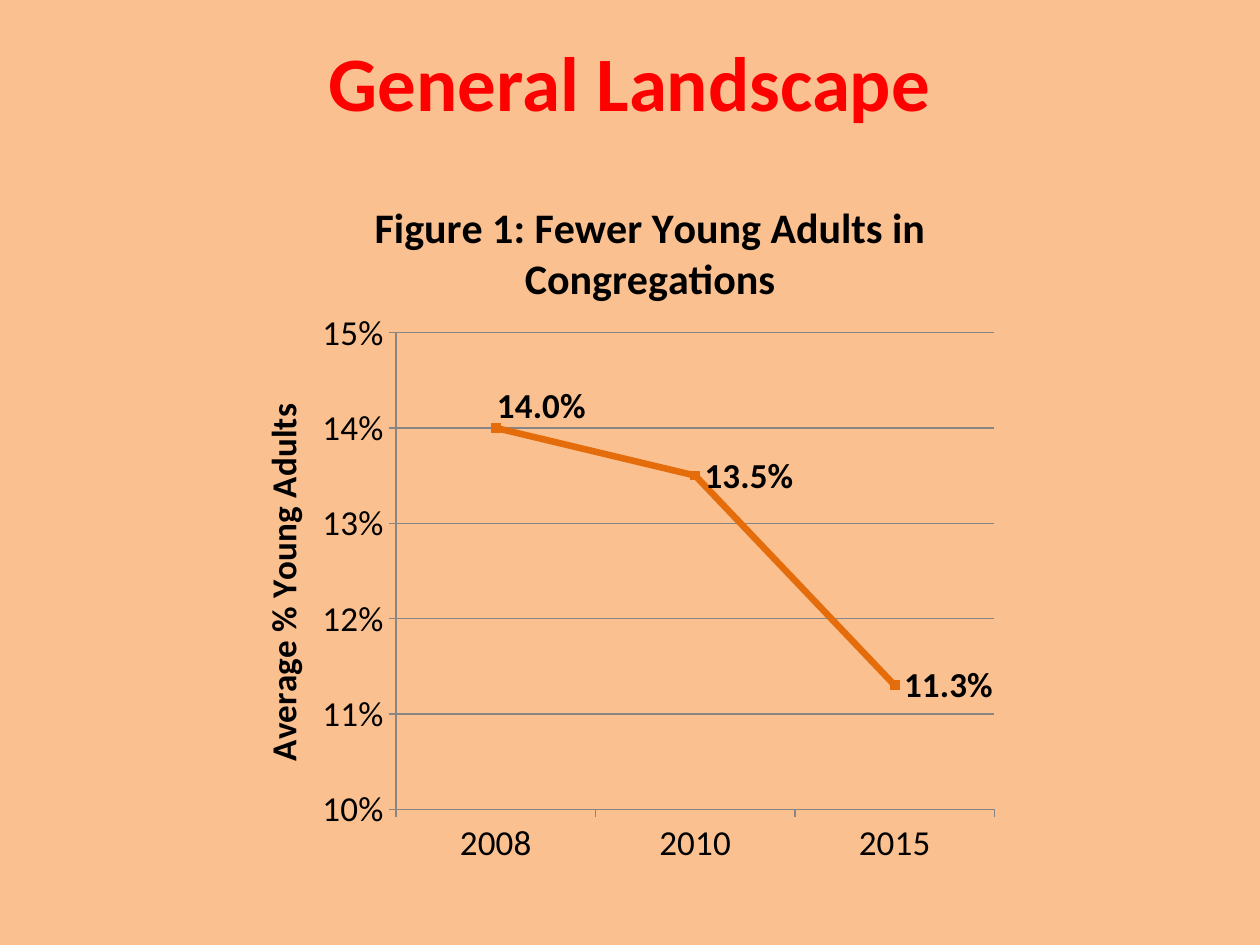
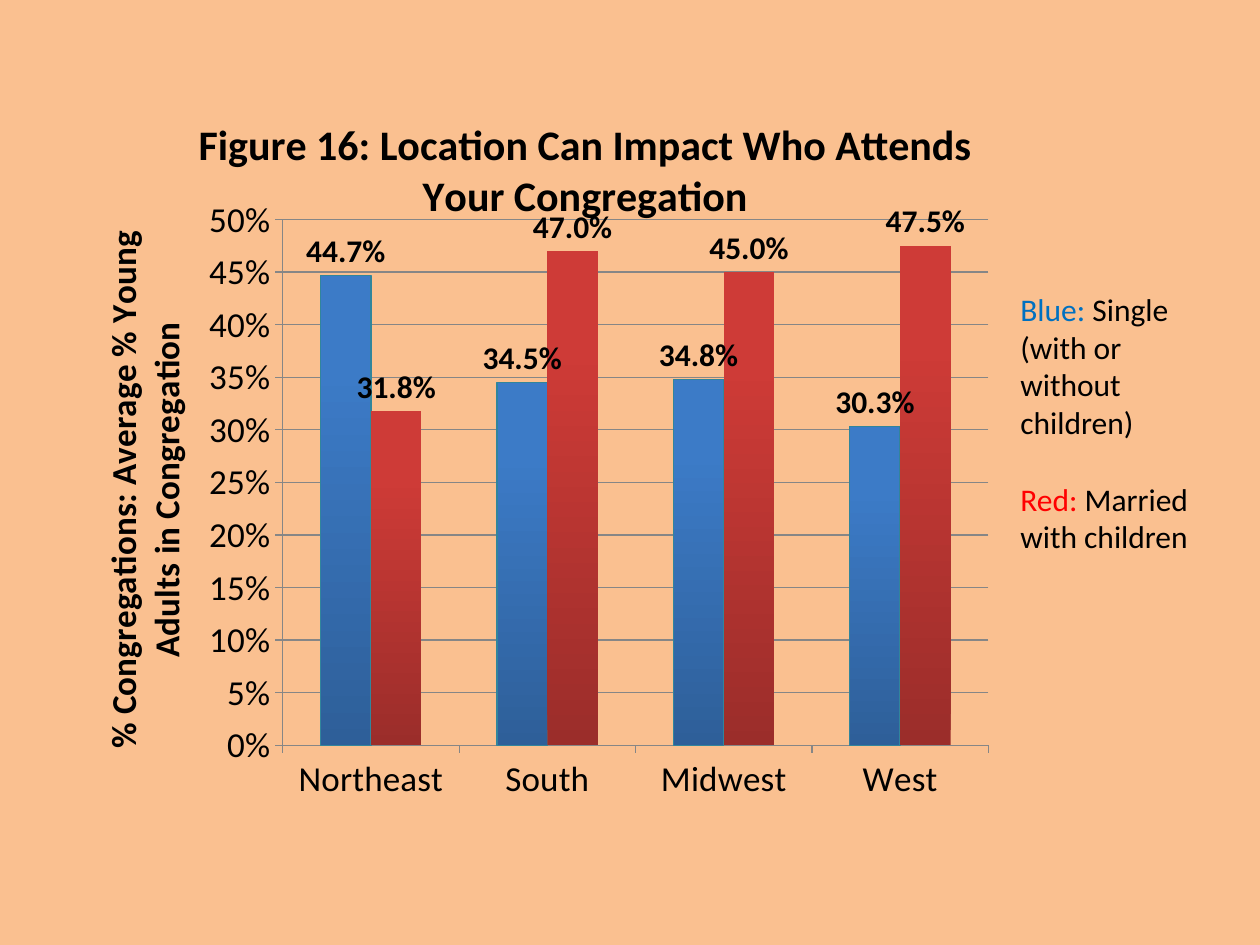
from lxml.etree import SubElement
from pptx import Presentation
from pptx.chart.data import CategoryChartData
from pptx.dml.color import RGBColor
from pptx.enum.chart import XL_CHART_TYPE as ChartType
from pptx.enum.chart import XL_LABEL_POSITION as LabelPosition
from pptx.enum.chart import XL_MARKER_STYLE as MarkerStyle
from pptx.enum.chart import XL_TICK_MARK as TickMark
from pptx.enum.text import MSO_ANCHOR as Anchor
from pptx.enum.text import PP_ALIGN as Align
from pptx.oxml import parse_xml
from pptx.oxml.ns import nsdecls, qn
from pptx.util import Cm, Pt

PEACH = RGBColor(0xFA, 0xC0, 0x90)
BLACK = RGBColor(0, 0, 0)
RED = RGBColor(0xFF, 0, 0)
BLUE = RGBColor(0, 0x70, 0xC0)
ORANGE = RGBColor(0xE4, 0x6C, 0x0A)
GRID_GRAY = RGBColor(0x86, 0x86, 0x86)
TEAL = RGBColor(0x31, 0x85, 0x9C)
BLUE_BAR = (RGBColor(0x2E, 0x5F, 0x99), RGBColor(0x3C, 0x7B, 0xC7))
RED_BAR = (RGBColor(0x9B, 0x2D, 0x2A), RGBColor(0xCE, 0x3B, 0x37))
FONT = "Calibri"


def format_font(font, color=BLACK, **values):
    """Set the shared typeface, a colour and any further font values."""
    for name, value in {"name": FONT, **values}.items():
        setattr(font, name, value)
    font.color.rgb = color


def format_line(line, color, width=0.75):
    """Give a line its colour and its width in points."""
    line.color.rgb = color
    line.width = Pt(width)


def place_manually(parent, index, inner=False, **fractions):
    """Put a manual layout into a chart part, as fractions of the chart."""
    for layout in parent.findall(qn("c:layout")):
        parent.remove(layout)
    layout = parse_xml(f"<c:layout {nsdecls('c')}/>")
    manual = SubElement(layout, qn("c:manualLayout"))
    settings = {"layoutTarget": "inner"} if inner else {}
    if index == 0 or parent.tag == qn("c:title"):
        settings.update(xMode="edge", yMode="edge")
    for name, value in {**settings, **fractions}.items():
        SubElement(manual, qn(f"c:{name}")).set("val", str(value))
    parent.insert(index, layout)


def add_heading(slide, text):
    """Fill and format the title placeholder."""
    title = slide.shapes.title
    box = {"left": Cm(1.27), "top": Cm(0.03), "width": Cm(22.86), "height": Cm(3.18)}
    for name, value in box.items():
        setattr(title, name, value)
    title.text_frame.text = text
    title.text_frame.vertical_anchor = Anchor.MIDDLE
    paragraph = title.text_frame.paragraphs[0]
    paragraph.alignment = Align.CENTER
    format_font(paragraph.runs[0].font, RED, size=Pt(44), bold=True)


def add_chart_heading(heading, text, size, x, y):
    """Write a bold chart or axis title at a given place."""
    heading.text_frame.text = text
    format_font(heading.text_frame.paragraphs[0].runs[0].font, size=Pt(size), bold=True)
    place_manually(heading.element, 1, x=x, y=y)


def add_percent_chart(slide, kind, box, categories, series_values, scale, plot_area):
    """Add a chart with a percent axis, gridlines and no legend."""
    data = CategoryChartData(number_format="0.0%")
    data.categories = categories
    for number, values in enumerate(series_values, 1):
        data.add_series(f"Series {number}", values)
    chart = slide.shapes.add_chart(kind, *map(Cm, box), data).chart
    chart.has_legend = False
    format_font(chart.font, size=Pt(20))
    for axis in (chart.category_axis, chart.value_axis):
        axis.major_tick_mark = TickMark.OUTSIDE
        axis.minor_tick_mark = TickMark.NONE
        format_line(axis.format.line, GRID_GRAY)
    axis = chart.value_axis
    axis.minimum_scale, axis.maximum_scale, axis.major_unit = scale
    axis.tick_labels.number_format = "0%"
    axis.tick_labels.number_format_is_linked = False
    format_line(axis.major_gridlines.format.line, GRID_GRAY)
    chart.plots[0].vary_by_categories = False
    place_manually(chart.element.xpath(".//c:plotArea")[0], 0, inner=True,
                   **dict(zip("xywh", plot_area)))
    return chart


def show_values(labels, size, position):
    """Show bold percent values beside the points of a series."""
    settings = {"show_value": True, "number_format": "0.0%",
                "number_format_is_linked": False, "position": position}
    for name, value in settings.items():
        setattr(labels, name, value)
    format_font(labels.font, size=Pt(size), bold=True)


def style_trend(series):
    """Draw the orange line with its markers and value labels."""
    series.smooth = False
    format_line(series.format.line, ORANGE, 3.75)
    series.marker.style = MarkerStyle.SQUARE
    series.marker.size = 5
    series.marker.format.fill.solid()
    series.marker.format.fill.fore_color.rgb = ORANGE
    format_line(series.marker.format.line, ORANGE)
    show_values(series.data_labels, 20, LabelPosition.RIGHT)
    first_label = series.points[0].data_label
    first_label.position = LabelPosition.RIGHT
    format_font(first_label.font, size=Pt(20), bold=True)


def style_columns(series, colors):
    """Shade columns from a dark foot to a bright top."""
    fill = series.format.fill
    fill.gradient()
    fill.gradient_angle = 90
    for stop, color, position in zip(fill.gradient_stops, colors, (0, 0.8)):
        stop.color.rgb = color
        stop.position = position
    series.invert_if_negative = False
    show_values(series.data_labels, 18, LabelPosition.OUTSIDE_END)


def add_color_key(slide, box, entries):
    """Explain the column colours, one paragraph for each."""
    frame = slide.shapes.add_textbox(*map(Cm, box)).text_frame
    frame.word_wrap = True
    for number, (name, color, meaning) in enumerate(entries):
        paragraph = frame.add_paragraph() if number else frame.paragraphs[0]
        paragraph.space_before = Pt(22 if number else 0)
        for text, text_color in ((name, color), (f" {meaning}", BLACK)):
            run = paragraph.add_run()
            run.text = text
            format_font(run.font, text_color, size=Pt(18))


def build_landscape_slide(presentation):
    """Show the falling share of young adults."""
    slide = presentation.slides.add_slide(presentation.slide_layouts[5])
    add_heading(slide, "General Landscape")
    chart = add_percent_chart(
        slide, ChartType.LINE_MARKERS, (4.24, 2.97, 16.64, 14.83),
        ("2008", "2010", "2015"), [(0.14, 0.135, 0.113)],
        (0.1, 0.15, 0.01), (0.225, 0.252, 0.725, 0.648))
    add_chart_heading(chart.chart_title, "Figure 1: Fewer Young Adults in Congregations",
                      24, 0.19, 0.06)
    add_chart_heading(chart.value_axis.axis_title, "Average % Young Adults", 20, 0.05, 0.34)
    style_trend(chart.plots[0].series[0])
    place_manually(chart.element.xpath(".//c:dLbl")[0], 1, x=-0.01, y=-0.03)


def build_location_slide(presentation):
    """Compare single and married young adults by region."""
    slide = presentation.slides.add_slide(presentation.slide_layouts[6])
    chart = add_percent_chart(
        slide, ChartType.COLUMN_CLUSTERED, (0.84, 1.9, 20.09, 14.6),
        ("Northeast", "South", "Midwest", "West"),
        [(0.447, 0.345, 0.348, 0.303), (0.318, 0.47, 0.45, 0.475)],
        (0, 0.5, 0.05), (0.242, 0.173, 0.708, 0.726))
    add_chart_heading(chart.chart_title,
                      "Figure 16: Location Can Impact Who Attends Your Congregation",
                      24, 0.15, 0.02)
    add_chart_heading(chart.value_axis.axis_title,
                      "% Congregations: Average % Young Adults in Congregation", 20, 0.05, 0.18)
    plot = chart.plots[0]
    plot.gap_width = 150
    for series, colors in zip(plot.series, (BLUE_BAR, RED_BAR)):
        style_columns(series, colors)
    format_line(plot.series[0].format.line, TEAL)
    add_color_key(slide, (20.32, 5.72, 4.45, 5.64), (
        ("Blue:", BLUE, "Single (with or without children)"),
        ("Red:", RED, "Married with children")))


def main():
    """Build and save the two slides."""
    presentation = Presentation()
    presentation.slide_width, presentation.slide_height = Cm(25.4), Cm(19.05)
    background = presentation.slide_master.background.fill
    background.solid()
    background.fore_color.rgb = PEACH
    build_landscape_slide(presentation)
    build_location_slide(presentation)
    presentation.save("out.pptx")


if __name__ == "__main__":
    main()
